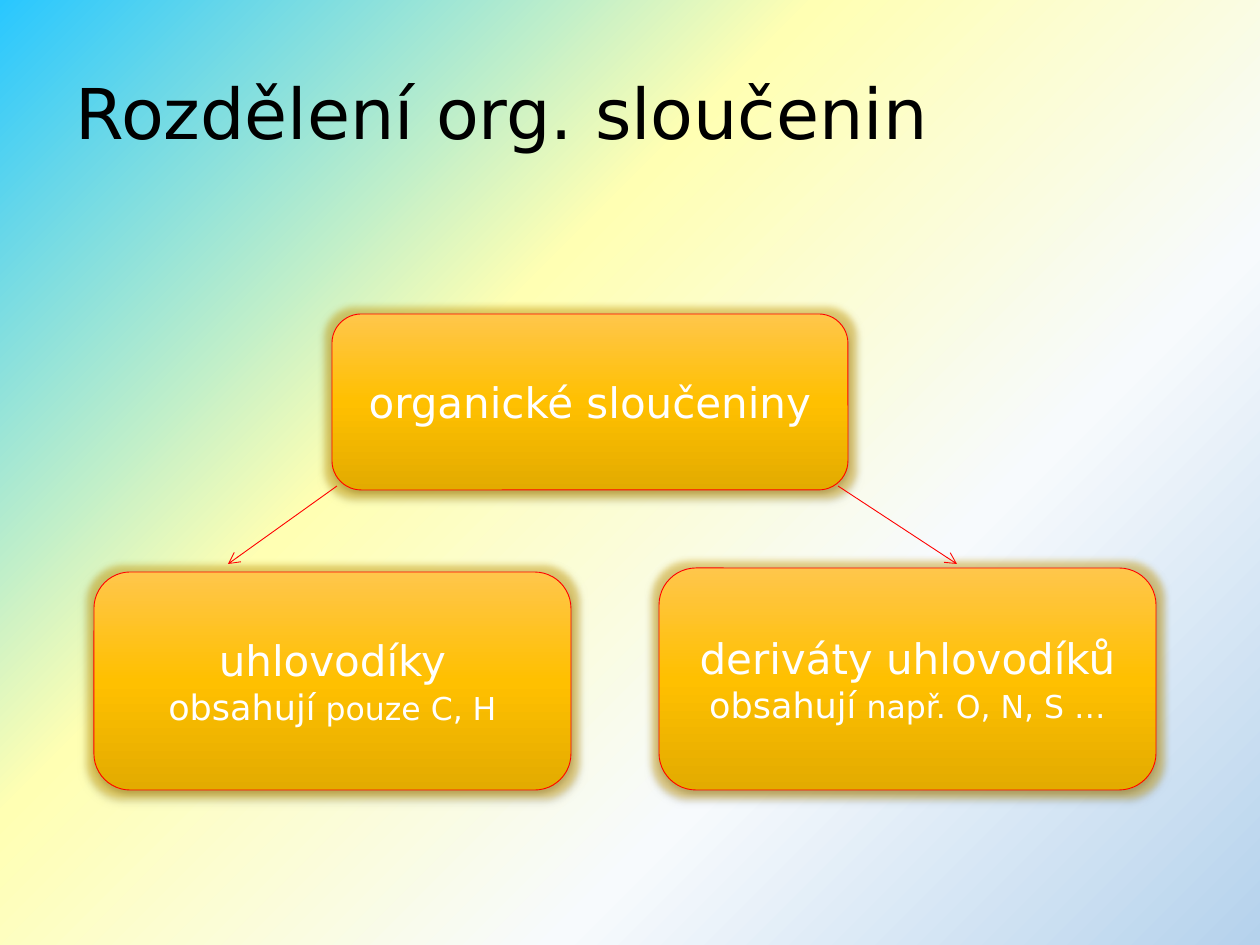
"""Build a slide that splits organic compounds into two groups."""
from lxml import etree
from pptx import Presentation
from pptx.dml.color import RGBColor
from pptx.enum.shapes import MSO_CONNECTOR, MSO_SHAPE
from pptx.enum.text import MSO_ANCHOR, MSO_AUTO_SIZE, PP_ALIGN
from pptx.oxml.ns import qn
from pptx.util import Emu, Pt

ROUND = MSO_SHAPE.ROUNDED_RECTANGLE
ALT = MSO_SHAPE.FLOWCHART_ALTERNATE_PROCESS
LINE = MSO_CONNECTOR.STRAIGHT
MID = MSO_ANCHOR.MIDDLE
LEFT, CENTER = PP_ALIGN.LEFT, PP_ALIGN.CENTER

SCALE = 914400 / 126
FONT = "DejaVu Sans"
HEX = {"ink": "000000", "text": "FFFFFF", "edge": "FF0000",
       "glow": "D9A500", "shade": "000000"}
SKY = [(0, "29C7FF"), (37, "FFFFB3"), (68, "F7FAFD"), (100, "B5D2EC")]
GOLD = [(0, "FFC64B"), (50, "FFC000"), (100, "E3AB00")]

TITLE = "Rozdělení org. sloučenin"
BOXES = [
    (ALT, (332, 314, 516, 176), [[("organické sloučeniny", 24)]]),
    (ROUND, (94, 572, 477, 218),
     [[("uhlovodíky", 24)], [("obsahují", 20), (" pouze C, H", 18)]]),
    (ROUND, (659, 568, 497, 222),
     [[("deriváty uhlovodíků", 24)],
      [("obsahují", 20), (" např. O, N, S …", 18)]]),
]
ARROWS = [(838, 486, 957, 564), (337, 486, 228, 564)]


def px(*nums):
    return [Emu(round(n * SCALE)) for n in nums]


def color(name):
    return RGBColor.from_string(HEX[name])


def write(frame, rows, tint="text", align=CENTER, space=None):
    frame.word_wrap = True
    frame.auto_size = MSO_AUTO_SIZE.NONE
    frame.vertical_anchor = MID
    for i, row in enumerate(rows):
        para = frame.add_paragraph() if i else frame.paragraphs[0]
        para.alignment = align
        para.line_spacing = space
        for text, size in row:
            run = para.add_run()
            run.text = text
            run.font.name = FONT
            run.font.size = Pt(size)
            run.font.color.rgb = color(tint)


def blend(fill, root, stops, angle):
    fill.gradient()
    fill.gradient_angle = angle
    group = next(root.iter(qn("a:gsLst")))
    for old in list(group):
        group.remove(old)
    for spot, tone in stops:
        stop = etree.SubElement(group, qn("a:gs"), pos=str(spot * 1000))
        etree.SubElement(stop, qn("a:srgbClr"), val=tone)


def effect(group, kind, tint, alpha, **attrs):
    node = etree.SubElement(group, qn(kind), **attrs)
    tone = etree.SubElement(node, qn("a:srgbClr"), val=HEX[tint])
    etree.SubElement(tone, qn("a:alpha"), val=str(alpha * 1000))


def stroke(line):
    line.color.rgb = color("edge")
    line.width = Pt(0.5)


def add_box(slide, kind, place, rows):
    box = slide.shapes.add_shape(kind, *px(*place))
    box.shadow.inherit = False
    blend(box.fill, box.element, GOLD, 270)
    stroke(box.line)
    group = box.element.spPr.find(qn("a:effectLst"))
    effect(group, "a:glow", "glow", 40, rad=str(Pt(8)))
    effect(group, "a:outerShdw", "shade", 35, blurRad=str(Pt(3.1)),
           dist=str(Pt(1.8)), dir="5400000", rotWithShape="0")
    write(box.text_frame, rows)


def add_arrow(slide, ends):
    arrow = slide.shapes.add_connector(LINE, *px(*ends))
    stroke(arrow.line)
    props = arrow.element.spPr
    etree.SubElement(props.find(qn("a:ln")), qn("a:tailEnd"), type="arrow")
    etree.SubElement(props, qn("a:effectLst"))


def main():
    deck = Presentation()
    deck.slide_width, deck.slide_height = px(1260, 945)
    slide = deck.slides.add_slide(deck.slide_layouts[5])
    blend(slide.background.fill, slide.element, SKY, 315)
    title = slide.shapes.title
    title.left, title.top, title.width, title.height = px(63, 38, 1134, 157)
    write(title.text_frame, [[(TITLE, 40)]], tint="ink", align=LEFT, space=0.9)
    for kind, place, rows in BOXES:
        add_box(slide, kind, place, rows)
    for ends in ARROWS:
        add_arrow(slide, ends)
    deck.save("out.pptx")


if __name__ == "__main__":
    main()
